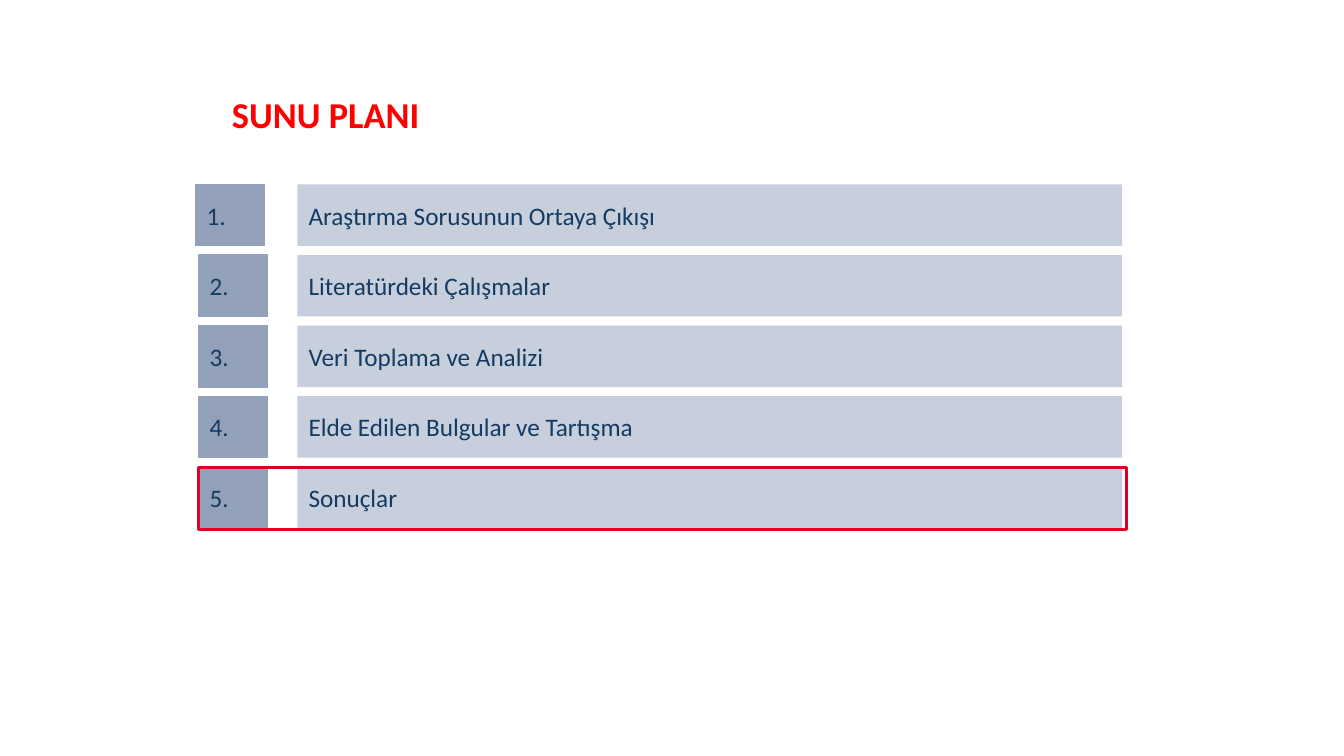
from dataclasses import dataclass

from pptx import Presentation
from pptx.dml.color import RGBColor
from pptx.enum.shapes import MSO_SHAPE
from pptx.enum.text import MSO_ANCHOR, MSO_AUTO_SIZE, PP_ALIGN
from pptx.util import Inches, Pt

TITLE = "SUNU PLANI"
TOPICS = [
    "Araştırma Sorusunun Ortaya Çıkışı",
    "Literatürdeki Çalışmalar",
    "Veri Toplama ve Analizi",
    "Elde Edilen Bulgular ve Tartışma",
    "Sonuçlar",
]
CURRENT = 5
TOP, PITCH, ROW_H = 1.83, 0.7, 0.61
NUMBER_X, FIRST_NUMBER_X, NUMBER_W = 1.97, 1.94, 0.68
TOPIC_X, TOPIC_W = 2.95, 8.18
FRAME_W = 9.2


@dataclass(frozen=True)
class Theme:
    """Colours and type of the slide."""
    font: str = "Calibri"
    title_size: int = 26
    body_size: int = 18
    title: str = "FF0000"
    text: str = "153B63"
    number: str = "92A0B9"
    topic: str = "C7CFDC"
    frame: str = "DF0024"


THEME = Theme()


def style(p, size, color, bold=False):
    """Set the font and left alignment of a paragraph."""
    p.alignment = PP_ALIGN.LEFT
    f = p.font
    f.name, f.size, f.bold = THEME.font, Pt(size), bold
    f.color.rgb = RGBColor.from_string(color)


def add_box(s, x, y, w, fill=None, line=None, weight=0.75, text=""):
    """Add a row-high rectangle with optional fill, outline and text."""
    sp = s.shapes.add_shape(MSO_SHAPE.RECTANGLE, Inches(x), Inches(y), Inches(w), Inches(ROW_H))
    sp.shadow.inherit = False
    if fill:
        sp.fill.solid()
        sp.fill.fore_color.rgb = RGBColor.from_string(fill)
    else:
        sp.fill.background()
    if line:
        sp.line.color.rgb = RGBColor.from_string(line)
        sp.line.width = Pt(weight)
    else:
        sp.line.fill.background()
    if text:
        tf = sp.text_frame
        tf.word_wrap = True
        tf.vertical_anchor = MSO_ANCHOR.MIDDLE
        tf.margin_left = tf.margin_right = Inches(0.11)
        tf.text = text
        style(tf.paragraphs[0], THEME.body_size, THEME.text)


def add_title(s):
    """Place and format the title placeholder."""
    sp = s.shapes.title
    sp.left, sp.top, sp.width, sp.height = map(Inches, (2.3, 0.86, 8.57, 0.65))
    tf = sp.text_frame
    tf.text = TITLE
    tf.word_wrap = True
    tf.auto_size = MSO_AUTO_SIZE.NONE
    tf.vertical_anchor = MSO_ANCHOR.TOP
    tf.margin_left = tf.margin_right = tf.margin_bottom = 0
    tf.margin_top = Inches(0.01)
    p = tf.paragraphs[0]
    p.line_spacing = 1.11
    style(p, THEME.title_size, THEME.title, bold=True)


def main():
    """Build the agenda slide."""
    prs = Presentation()
    prs.slide_width, prs.slide_height = Inches(13.33), Inches(7.5)
    s = prs.slides.add_slide(prs.slide_layouts[5])
    add_title(s)
    for n, topic in enumerate(TOPICS, 1):
        y = TOP + (n - 1) * PITCH
        x = FIRST_NUMBER_X if n == 1 else NUMBER_X
        add_box(s, x, y, NUMBER_W, THEME.number, THEME.number, text=f"{n}.")
        add_box(s, TOPIC_X, y, TOPIC_W, THEME.topic, text=topic)
    add_box(s, NUMBER_X, TOP + (CURRENT - 1) * PITCH + 0.01, FRAME_W, line=THEME.frame, weight=2.25)
    prs.save("out.pptx")


if __name__ == "__main__":
    main()
